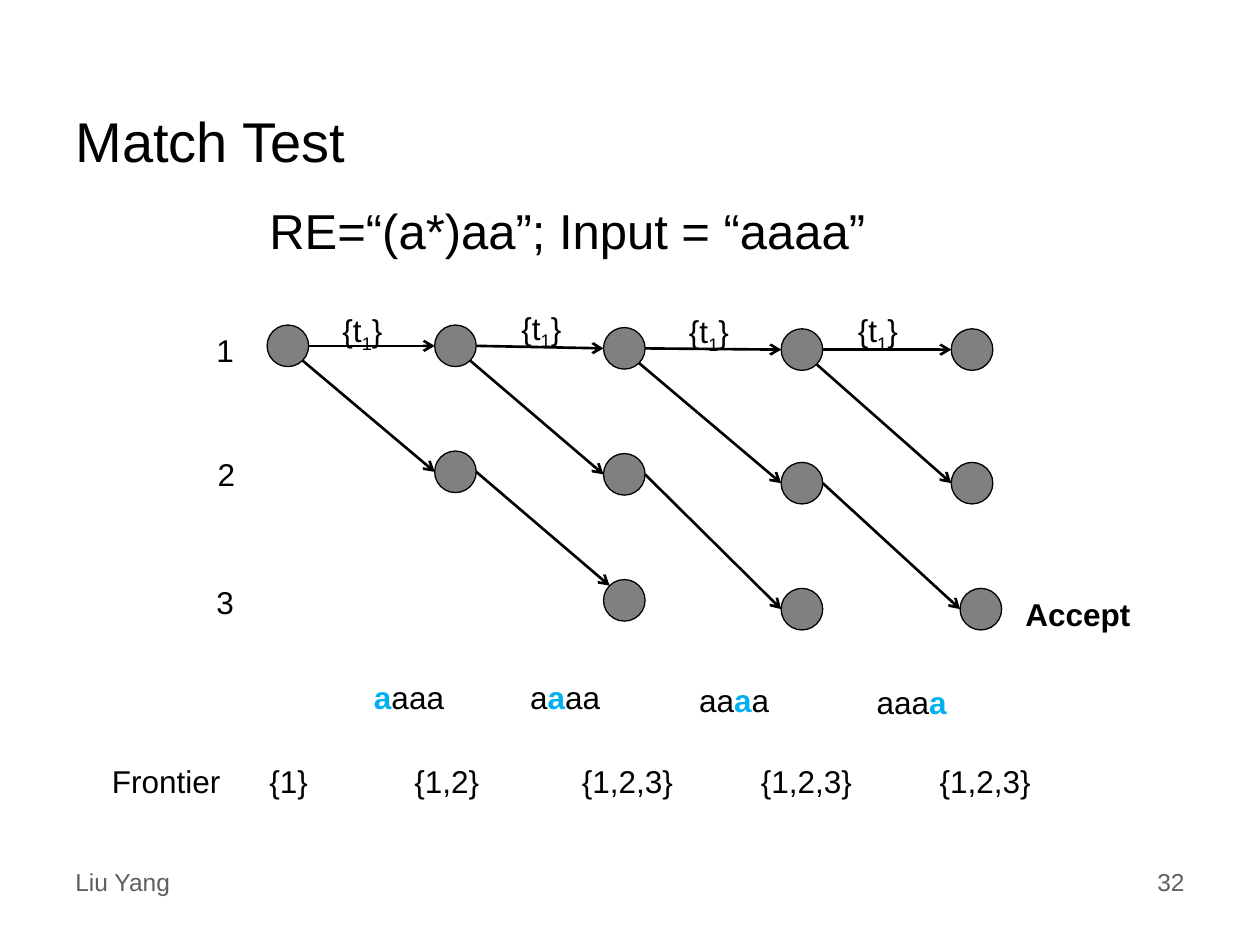
from lxml import etree
from pptx import Presentation
from pptx.dml.color import RGBColor
from pptx.enum.shapes import MSO_CONNECTOR, MSO_SHAPE
from pptx.enum.text import MSO_ANCHOR, PP_ALIGN
from pptx.oxml.ns import qn
from pptx.util import Inches, Pt

LINE = MSO_CONNECTOR.STRAIGHT
DOT = MSO_SHAPE.FLOWCHART_CONNECTOR
MID, RIGHT = MSO_ANCHOR.MIDDLE, PP_ALIGN.RIGHT

# Theme
WIDE, HIGH = 10, 7.5
THEME = {
    "font": "Arial", "ink": "000000", "grey": "5F5F5F", "hot": "00B0F0",
    "dot": "808080", "title": 32, "head": 28, "body": 18, "foot": 14,
    "rim": 0.75, "arrow": 1.5,
}

# Content
TITLE = "Match Test"
HEAD = "RE=“(a*)aa”; Input = “aaaa”"
STATES = ["1", "2", "3"]
WORD = "aaaa"
TAG = [("{t", ""), ("1", "sub"), ("}", "")]
SETS = ["{1}", "{1,2}", "{1,2,3}", "{1,2,3}", "{1,2,3}"]

# Grid: columns are input steps, rows are states
COLS = [2.12, 3.45, 4.79, 6.2, 7.55]
ROWS = [[2.58], [2.58, 3.58], [2.6, 3.6, 4.6],
        [2.61, 3.67, 4.67], [2.61, 3.67, 4.67]]
END = 7.62  # the accepting node sits a little right of its column
SIZE = 0.33
NEAR, FAR = SIZE * 0.146, SIZE * 0.854  # diagonal points on the rim
SIDES = {"left": (0, SIZE / 2), "right": (SIZE, SIZE / 2),
         "upper": (NEAR, NEAR), "lower": (FAR, FAR)}

# Places of the labels: left, top, width
STATE_AT = [(1.62, 2.58), (1.63, 3.56), (1.62, 4.58)]
TAG_AT = [(2.62, 2.42), (4.04, 2.4), (5.37, 2.43), (6.71, 2.42)]
WORD_AT = [(2.87, 5.33), (4.11, 5.33), (5.45, 5.36), (6.86, 5.37)]
SET_AT = [(2.04, 0.51), (3.19, 0.72), (4.52, 0.93), (5.94, 0.93), (7.36, 0.93)]
SET_TOP = 0.8 * HIGH
EDGE = 0.05 * WIDE

deck = Presentation()
deck.slide_width, deck.slide_height = Inches(WIDE), Inches(HIGH)
slide = deck.slides.add_slide(deck.slide_layouts[6])
shapes = slide.shapes


def color(name):
    return RGBColor.from_string(THEME[name])


def write(runs, x, y, w, h=0.38, size="body", ink="ink", wrap=False, **form):
    """Add a text box; runs is a string or a list of (text, style)."""
    frame = shapes.add_textbox(*map(Inches, (x, y, w, h))).text_frame
    frame.word_wrap = wrap
    if "anchor" in form:
        frame.vertical_anchor = form["anchor"]
    para = frame.paragraphs[0]
    if "align" in form:
        para.alignment = form["align"]
    for text, style in [(runs, "")] if isinstance(runs, str) else runs:
        run = para.add_run()
        run.text = text
        look = {"name": THEME["font"], "size": Pt(THEME[size]),
                "bold": style in ("bold", "hot")}
        for key, val in look.items():
            setattr(run.font, key, val)
        run.font.color.rgb = color("hot" if style == "hot" else ink)
        if style == "sub":
            run.font._element.set("baseline", "-25000")


def place(col, row):
    left = END if (col, row) == (4, 2) else COLS[col]
    return left, ROWS[col][row]


def node(col, row):
    x, y = place(col, row)
    dot = shapes.add_shape(DOT, *map(Inches, (x, y, SIZE, SIZE)))
    dot.shadow.inherit = False
    dot.fill.solid()
    dot.fill.fore_color.rgb = color("dot")
    dot.line.color.rgb = color("ink")
    dot.line.width = Pt(THEME["rim"])


def arrow(start, side, stop, goal):
    ends = []
    for spot, name in ((start, side), (stop, goal)):
        ends += [Inches(a + b) for a, b in zip(place(*spot), SIDES[name])]
    link = shapes.add_connector(LINE, *ends)
    link.line.color.rgb = color("ink")
    link.line.width = Pt(THEME["arrow"])
    tip = etree.SubElement(link.line._get_or_add_ln(), qn("a:tailEnd"))
    tip.set("type", "arrow")
    etree.SubElement(link._element.spPr, qn("a:effectLst"))


# Title and heading
write(TITLE, EDGE, 0.67, 0.9 * WIDE, 0.88, "title", wrap=True, anchor=MID)
write(HEAD, 2.04, 1.54, 5, 0.57, "head")

# Nodes
for col, tops in enumerate(ROWS):
    for row in range(len(tops)):
        node(col, row)

# Arrows: each state loops or moves on to the next one
for col in range(len(COLS) - 1):
    arrow((col, 0), "right", (col + 1, 0), "left")
    arrow((col, 0), "lower", (col + 1, 1), "left")
    if col:
        goal = "upper" if col == 1 else "left"
        arrow((col, 1), "right", (col + 1, 2), goal)

# State numbers, arrow tags and the input with its current letter
for text, (x, y) in zip(STATES, STATE_AT):
    write(text, x, y, 0.34)
for x, y in TAG_AT:
    write(TAG, x, y, 0.53, 0.4)
for i, (x, y) in enumerate(WORD_AT):
    parts = [(WORD[:i], ""), (WORD[i], "hot"), (WORD[i + 1:], "")]
    write([part for part in parts if part[0]], x, y, 0.76, 0.4)
write([("Accept", "bold")], 8.04, 4.67, 1.17, 0.4, wrap=True)

# Frontier sets
write("Frontier", 0.79, SET_TOP, 1.07)
for text, (x, w) in zip(SETS, SET_AT):
    write(text, x, SET_TOP, w)

# Footer
foot = {"size": "foot", "ink": "grey", "wrap": True}
write("Liu Yang", EDGE, 6.83, 2.5, 0.33, **foot)
write("32", 7.17, 6.83, 2.33, 0.52, align=RIGHT, **foot)

deck.save("out.pptx")
